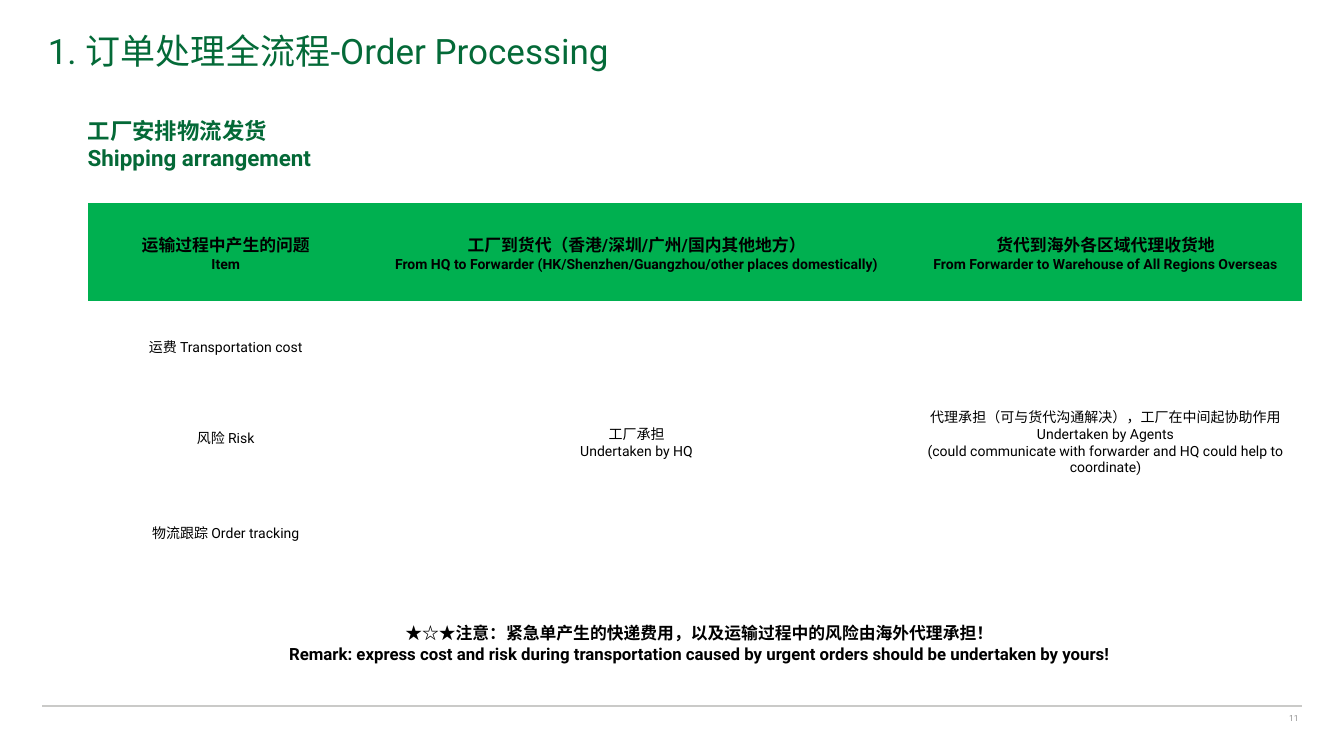
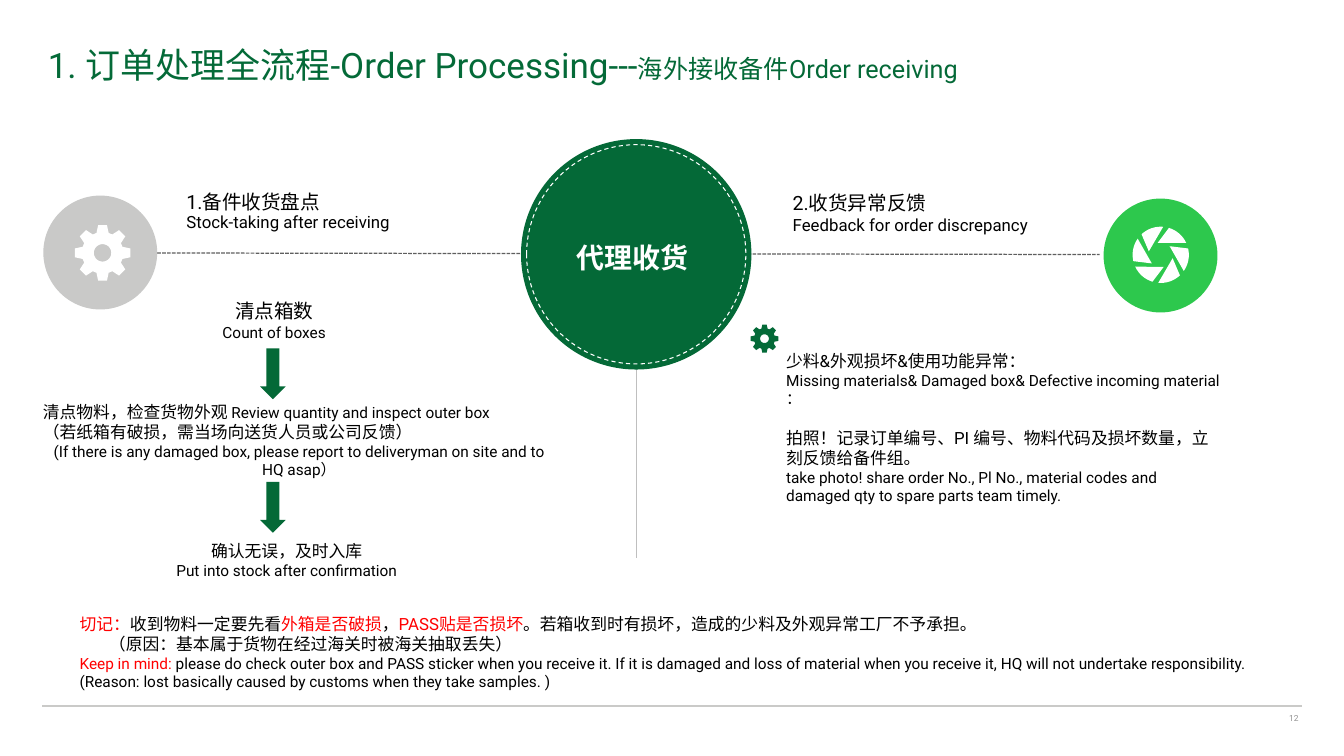
import math

import pptx
import pptx.dml.color
import pptx.enum.dml
import pptx.enum.shapes
import pptx.enum.text
import pptx.oxml.ns
import pptx.util
from lxml import etree

Pt = pptx.util.Pt
RGBColor = pptx.dml.color.RGBColor
Shape = pptx.enum.shapes.MSO_SHAPE
Dash = pptx.enum.dml.MSO_LINE
Align = pptx.enum.text.PP_ALIGN
Anchor = pptx.enum.text.MSO_ANCHOR

FONT = "Roboto"
GREEN = RGBColor(0x04, 0x6A, 0x38)
DEEP_GREEN = RGBColor(0x04, 0x69, 0x37)
HEADER_GREEN = RGBColor(0x00, 0xB0, 0x50)
BRIGHT_GREEN = RGBColor(0x2D, 0xC8, 0x4D)
BLACK = RGBColor(0x00, 0x00, 0x00)
WHITE = RGBColor(0xFF, 0xFF, 0xFF)
RED = RGBColor(0xFF, 0x00, 0x00)
RULE_GREY = RGBColor(0xCA, 0xCA, 0xC8)
BADGE_GREY = RGBColor(0xC9, 0xC9, 0xC8)
NUMBER_GREY = RGBColor(0x92, 0x92, 0x92)
DASH_GREY = RGBColor(0x5E, 0x5E, 0x5E)
STEM_GREY = RGBColor(0xBF, 0xBF, 0xBF)
NO_STYLE = "{2D5ABB26-0587-4C30-8999-92F81FD0307C}"
TIGHT = (4.3, 4.3, 4.3, 4.3)
ROOMY = (14.4, 7.2, 14.4, 7.2)


def run(text, size, color=BLACK, bold=False):
    """Describe one run of text."""
    return text, size, color, bold


def add_paragraph(tf, first, runs, align=Align.LEFT, before=0, spacing=None, left=0):
    """Write one paragraph, run by run."""
    p = tf.paragraphs[0] if first else tf.add_paragraph()
    p.alignment = align
    if before:
        p.space_before = Pt(before)
    if spacing:
        p.line_spacing = spacing
    if left:
        p._p.get_or_add_pPr().set("marL", str(Pt(left)))
    for text, size, color, bold in runs:
        r = p.add_run()
        r.text = text
        r.font.name = FONT
        r.font.size = Pt(size)
        r.font.bold = bold
        r.font.color.rgb = color


def add_text(s, x, y, w, h, paragraphs, anchor=Anchor.TOP, margins=TIGHT, **style):
    """Add a wrapping text box of paragraphs, each a list of runs or a dict."""
    tf = s.shapes.add_textbox(Pt(x), Pt(y), Pt(w), Pt(h)).text_frame
    tf.word_wrap = True
    tf.vertical_anchor = anchor
    (tf.margin_left, tf.margin_top,
     tf.margin_right, tf.margin_bottom) = [Pt(m) for m in margins]
    for i, item in enumerate(paragraphs):
        options = item if isinstance(item, dict) else {"runs": item}
        add_paragraph(tf, i == 0, **{**style, **options})


def add_line(s, x1, y1, x2, y2, color, width, dash=None):
    """Add a straight line without a shadow."""
    c = s.shapes.add_connector(pptx.enum.shapes.MSO_CONNECTOR.STRAIGHT,
                               Pt(x1), Pt(y1), Pt(x2), Pt(y2))
    c.line.color.rgb = color
    c.line.width = Pt(width)
    if dash:
        c.line.dash_style = dash
    etree.SubElement(c._element.spPr, pptx.oxml.ns.qn("a:effectLst"))


def paint(sp, fill, line=None, width=0, dash=None):
    """Set the fill and outline of a shape."""
    sp.shadow.inherit = False
    sp.fill.solid()
    sp.fill.fore_color.rgb = fill
    if line is None:
        sp.line.fill.background()
        return
    sp.line.color.rgb = line
    sp.line.width = Pt(width)
    if dash:
        sp.line.dash_style = dash


def add_shape(s, kind, x, y, w, h, *colors):
    """Add a painted preset shape."""
    sp = s.shapes.add_shape(kind, Pt(x), Pt(y), Pt(w), Pt(h))
    paint(sp, *colors)


def add_outline(s, cx, cy, contours, color):
    """Draw closed contours of (radius, degrees) points around a centre."""
    builder = None
    for contour in contours:
        points = [(Pt(cx + r * math.cos(math.radians(a))),
                   Pt(cy - r * math.sin(math.radians(a)))) for r, a in contour]
        if builder is None:
            builder = s.shapes.build_freeform(*points[0], scale=1.0)
        else:
            builder.move_to(*points[0])
        builder.add_line_segments(points[1:], close=True)
    paint(builder.convert_to_shape(), color)


def add_gear(s, cx, cy, radius, color):
    """Draw an eight-toothed gear with a round hole."""
    tooth = [(0.74, -17), (1, -9), (1, 9), (0.74, 17)]
    rim = [(radius * k, 45 * i + a) for i in range(8) for k, a in tooth]
    hole = [(radius * 0.31, -a) for a in range(0, 360, 10)]
    add_outline(s, cx, cy, [rim, hole], color)


def add_aperture(s, cx, cy, radius, color):
    """Draw a six-bladed camera aperture."""
    blade = [(1, a) for a in range(85, 139, 6)] + [(0.44, 164)]
    blades = [[(radius * k, a + 60 * i) for k, a in blade] for i in range(6)]
    add_outline(s, cx, cy, blades, color)


def frame(prs, number, title_y, title):
    """Start a slide with its title, footer rule and page number."""
    s = prs.slides.add_slide(prs.slide_layouts[6])
    add_line(s, 60.5, 1008.7, 1859.8, 1008.7, RULE_GREY, 2)
    add_text(s, 1644.5, 1013.8, 215.3, 22.3,
             [[run(str(number), 12, NUMBER_GREY)]], align=Align.RIGHT)
    add_text(s, 61.2, title_y, 1798.6, 84.2, [title], Anchor.MIDDLE,
             (7.2, 3.6, 7.2, 3.6))
    return s


def responsibility_table(s, x, y, w, h):
    """Add the table of who bears each shipping issue."""
    header = [("运输过程中产生的问题", "Item"),
              ("工厂到货代（香港/深圳/广州/国内其他地方）",
               "From HQ to Forwarder (HK/Shenzhen/Guangzhou/other places domestically)"),
              ("货代到海外各区域代理收货地",
               "From Forwarder to Warehouse of All Regions Overseas")]
    body = {(1, 0): ["运费 Transportation cost"],
            (2, 0): ["风险 Risk"],
            (3, 0): ["物流跟踪 Order tracking"],
            (1, 1): ["工厂承担", "Undertaken by HQ"],
            (1, 2): ["代理承担（可与货代沟通解决），工厂在中间起协助作用",
                     "Undertaken by Agents",
                     "(could communicate with forwarder and HQ could help to coordinate)"]}
    table = s.shapes.add_table(5, 3, Pt(x), Pt(y), Pt(w), Pt(h)).table
    table.first_row = table.horz_banding = False
    table._tbl.tblPr.find(pptx.oxml.ns.qn("a:tableStyleId")).text = NO_STYLE
    for column, share in zip(table.columns, (0.2274, 0.4495, 0.3231)):
        column.width = Pt(round(w * share, 2))
    for row, share in zip(table.rows, (0.2084, 0.1933, 0.1933, 0.2117, 0.1933)):
        row.height = Pt(round(h * share, 2))
    for i in range(5):
        for j in range(3):
            cell = table.cell(i, j)
            cell.vertical_anchor = Anchor.MIDDLE
            cell.margin_left = cell.margin_top = cell.margin_right = Pt(0.72)
            cell.margin_bottom = Pt(0)
            if i == 0:
                cell.fill.solid()
                cell.fill.fore_color.rgb = HEADER_GREEN
                lines = [run(t, size, bold=True) for t, size in zip(header[j], (24, 20))]
            else:
                cell.fill.background()
                lines = [run(t, 20) for t in body.get((i, j), [])]
            for k, line in enumerate(lines):
                add_paragraph(cell.text_frame, k == 0, [line], Align.CENTER)
    for j in (1, 2):
        table.cell(1, j).merge(table.cell(3, j))
    table.cell(4, 0).merge(table.cell(4, 2))


def shipping_slide(prs):
    """Build the shipping arrangement slide."""
    s = frame(prs, 11, 29.5, [run("1. 订单处理全流程-Order Processing", 50, GREEN)])
    add_text(s, 125.3, 167.8, 674.6, 87,
             [[run(t, 32, DEEP_GREEN, True)]
              for t in ("工厂安排物流发货", "Shipping arrangement")],
             margins=(0, 0, 0, 0))
    responsibility_table(s, 125.3, 290.2, 1734.5, 670.3)
    remark = ("★☆★注意：紧急单产生的快递费用，以及运输过程中的风险由海外代理承担！",
              "Remark: express cost and risk during transportation caused by "
              "urgent orders should be undertaken by yours!")
    add_text(s, 292.3, 885.6, 1413.4, 102.2, [[run(t, 24, bold=True)] for t in remark],
             Anchor.MIDDLE, (4.3, 4.3, 4.3, 40), align=Align.CENTER)


def hub(s, x, y, d):
    """Draw the central disc with its dashed ring."""
    add_shape(s, Shape.OVAL, x, y, d, d, DEEP_GREEN, DEEP_GREEN, 3)
    add_shape(s, Shape.OVAL, x + 6.5, y + 6.5, d - 13, d - 13,
              DEEP_GREEN, WHITE, 1.5, Dash.DASH)
    add_text(s, x + 10, y + 122.4, d - 24, 98.6,
             [[run("代理收货", 40, WHITE, True)]], margins=ROOMY, spacing=1.3, left=54)


def badge(s, x, y, d, color, icon, dx, dy):
    """Draw a round badge with a white icon slightly off its centre."""
    add_shape(s, Shape.OVAL, x, y, d, d, color)
    icon(s, x + d / 2 + dx, y + d / 2 + dy, 40.2, WHITE)


def branch_label(s, x, y, w, h, chinese, english, spacing=None):
    """Write the two-line label above a branch."""
    add_text(s, x, y, w, h, [[run(chinese, 28)], [run(english, 24)]],
             margins=ROOMY, spacing=spacing)


def stock_flow(s, x, y, w):
    """Write the three stock-taking steps joined by arrows."""
    centered = {"anchor": Anchor.MIDDLE, "align": Align.CENTER}
    add_text(s, x + 169.2, y, 331.2, 68.4,
             [[run("清点箱数", 28)], [run("Count of boxes", 22)]], **centered)
    add_text(s, x, y + 145.4, w, 119.5, [
        [run("清点物料，检查货物外观 ", 24),
         run("Review quantity and inspect outer box", 22)],
        [run("（若纸箱有破损，需当场向送货人员或公司反馈）", 24)],
        {"runs": [run("(If there is any damaged box, please report to deliveryman "
                      "on site and to HQ asap）", 22)], "align": Align.CENTER},
    ], Anchor.MIDDLE)
    add_text(s, x + 113.7, y + 344.8, 478.1, 64.1,
             [[run("确认无误，及时入库", 24)],
              [run("Put into stock after confirmation", 22)]], **centered)
    for dy in (74.1, 264.9):
        add_shape(s, Shape.DOWN_ARROW, x + 314.6, y + dy, 36.7, 72.7, DEEP_GREEN)


def discrepancy_notes(s, x, y, w, h):
    """Write the discrepancy feedback beside a small gear."""
    add_gear(s, x - 26.6, y - 11.6, 20.2, GREEN)
    add_text(s, x, y, w, h, [
        [run("少料&外观损坏&使用功能异常：", 24)],
        [run("Missing materials& Damaged box& Defective incoming material ：", 22)],
        {"runs": [run("拍照！记录订单编号、PI 编号、物料代码及损坏数量，立刻反馈给备件组。", 24)],
         "before": 28},
        [run("take photo! share order No., Pl No., material codes and damaged qty "
             "to spare parts team timely.", 22)],
    ], Anchor.MIDDLE)


def reminder(s, x, y, w, h):
    """Write the closing warning."""
    add_text(s, x, y, w, h, [
        [run("切记：", 24, RED), run("收到物料一定要先看", 24),
         run("外箱是否破损", 24, RED), run("，", 24), run("PASS贴是否损坏", 24, RED),
         run("。若箱收到时有损坏，造成的少料及外观异常工厂不予承担。", 24)],
        {"runs": [run("（原因：基本属于货物在经过海关时被海关抽取丢失）", 24)], "left": 42},
        [run("Keep in mind: ", 22, RED),
         run("please do check outer box and PASS sticker when you receive it. If it is "
             "damaged and loss of material when you receive it, HQ will not undertake "
             "responsibility. (Reason: lost basically caused by customs when they take "
             "samples. )", 22)],
    ], margins=(7.2, 3.6, 7.2, 3.6))


def receiving_slide(prs):
    """Build the order receiving slide."""
    s = frame(prs, 12, 49.7, [run("1. 订单处理全流程-Order Processing---", 50, GREEN),
                              run("海外接收备件Order receiving", 36, DEEP_GREEN)])
    add_line(s, 909.4, 519.8, 909.4, 797.8, STEM_GREY, 0.25)
    add_line(s, 224.6, 361.4, 1571, 363.6, DASH_GREY, 1.75, Dash.SQUARE_DOT)
    hub(s, 745.9, 200.2, 326.2)
    branch_label(s, 252, 268.6, 428.4, 76.3,
                 "1.备件收货盘点", "Stock-taking after receiving", 0.9)
    branch_label(s, 1118.2, 265.7, 506.9, 79.2,
                 "2.收货异常反馈", "Feedback for order discrepancy")
    badge(s, 61.9, 279.4, 162.7, BADGE_GREY, add_gear, 3.3, 0.5)
    badge(s, 1576.8, 283.7, 162.7, BRIGHT_GREEN, add_aperture, 0.3, -1)
    stock_flow(s, 56.9, 423.4, 740.9)
    discrepancy_notes(s, 1118.9, 495.4, 630.7, 231.1)
    reminder(s, 106.6, 872.6, 1697.8, 118.8)


def main():
    """Build and save the presentation."""
    prs = pptx.Presentation()
    prs.slide_width, prs.slide_height = Pt(1920.24), Pt(1080)
    shipping_slide(prs)
    receiving_slide(prs)
    prs.save("out.pptx")


if __name__ == "__main__":
    main()
